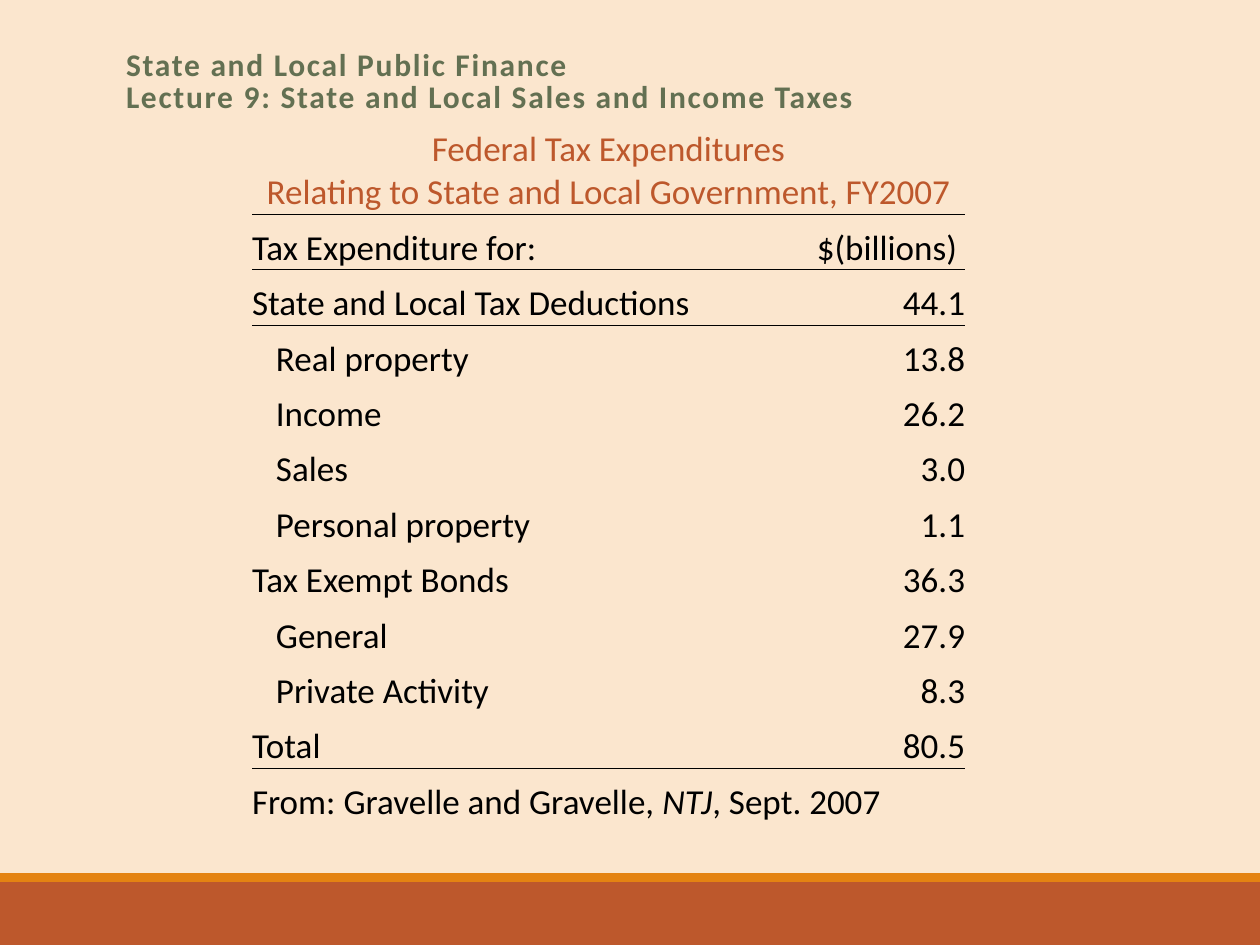
from lxml import etree
from pptx import Presentation, util as u
from pptx.dml.color import RGBColor
from pptx.enum import shapes, text
from pptx.oxml import ns

COLORS = {"background": "FBE6CE", "rust": "BD582C", "orange": "E48312",
          "green": "637052", "ink": "000000"}
LEFT, CENTER, RIGHT = text.PP_ALIGN.LEFT, text.PP_ALIGN.CENTER, text.PP_ALIGN.RIGHT
NO_STYLE = "{2D5ABB26-0587-4C30-8999-92F81FD0307C}"


def add_run(paragraph, words, size, color, bold=False, italic=False):
    run = paragraph.add_run()
    run.text = words
    font = run.font
    font.name, font.size = "Calibri", u.Pt(size)
    font.bold, font.italic = bold, italic
    font.color.rgb = RGBColor.from_string(COLORS[color])
    return run


def add_border(cell, side):
    line = etree.SubElement(cell._tc.get_or_add_tcPr(), ns.qn(f"a:{side}"), w=str(u.Pt(0.5)))
    fill = etree.SubElement(line, ns.qn("a:solidFill"))
    etree.SubElement(fill, ns.qn("a:srgbClr"), val=COLORS["ink"])


prs = Presentation()
prs.slide_width, prs.slide_height = u.Inches(10), u.Inches(7.5)
slide = prs.slides.add_slide(prs.slide_layouts[5])
slide.background.fill.solid()
slide.background.fill.fore_color.rgb = RGBColor.from_string(COLORS["background"])

for top, height, color in [(7, 0.5, "rust"), (6.93, 0.07, "orange")]:
    band = slide.shapes.add_shape(shapes.MSO_SHAPE.RECTANGLE, 0, u.Inches(top),
                                  prs.slide_width, u.Inches(height))
    band.shadow.inherit = False
    band.fill.solid()
    band.fill.fore_color.rgb = RGBColor.from_string(COLORS[color])
    band.line.fill.background()

title = slide.shapes.title
title.left, title.top = u.Inches(0.9), u.Inches(0.33)
title.width, title.height = u.Inches(8.25), u.Inches(0.65)
title.text_frame.vertical_anchor = text.MSO_ANCHOR.MIDDLE
title.text_frame.auto_size = text.MSO_AUTO_SIZE.NONE
heading = title.text_frame.paragraphs[0]
heading.alignment, heading.line_spacing = LEFT, 0.85
course = add_run(heading, "State and Local Public Finance", 18, "green", bold=True)
heading.add_line_break()
lecture = add_run(heading, "Lecture 9: State and Local Sales and Income Taxes", 18, "green", bold=True)
for run in (course, lecture):
    run.font._element.set("spc", "100")

captions = ["Federal Tax Expenditures", "Relating to State and Local Government, FY2007"]
expenditures = [
    ("Tax Expenditure for:", "$(billions)", 0),
    ("State and Local Tax Deductions", "44.1", 0),
    ("Real property", "13.8", 0.19),
    ("Income", "26.2", 0.19),
    ("Sales", "3.0", 0.19),
    ("Personal property", "1.1", 0.19),
    ("Tax Exempt Bonds", "36.3", 0),
    ("General", "27.9", 0.19),
    ("Private Activity", "8.3", 0.19),
    ("Total", "80.5", 0),
]
header_row = len(captions)
source_row = header_row + len(expenditures)
ruled_below = {header_row - 1, header_row, source_row - 1}

table = slide.shapes.add_table(source_row + 1, 2, u.Inches(2), u.Inches(0.92),
                               u.Inches(5.66), u.Inches(5.62)).table
table.first_row = table.horz_banding = False
table._tbl.tblPr.find(ns.qn("a:tableStyleId")).text = NO_STYLE
for column, width in zip(table.columns, [4.42, 1.24]):
    column.width = u.Inches(width)

for index, row in enumerate(table.rows):
    row.height = u.Inches(0.3 if index == 1 else 0.44)
    for cell in row.cells:
        cell.margin_left = cell.margin_right = cell.margin_top = cell.margin_bottom = 0
        cell.vertical_anchor = text.MSO_ANCHOR.BOTTOM
        if index - 1 in ruled_below:
            add_border(cell, "lnT")
        if index in ruled_below:
            add_border(cell, "lnB")
        cell.fill.background()

for index in (*range(header_row), source_row):
    table.cell(index, 0).merge(table.cell(index, 1))

for index, caption in enumerate(captions):
    paragraph = table.cell(index, 0).text_frame.paragraphs[0]
    paragraph.alignment = CENTER
    add_run(paragraph, caption, 20, "rust")

for index, (label, amount, indent) in enumerate(expenditures, header_row):
    label_line, amount_line = [cell.text_frame.paragraphs[0] for cell in table.rows[index].cells]
    label_line._p.get_or_add_pPr().set("marL", str(u.Inches(indent)))
    add_run(label_line, label, 20, "ink")
    amount_line.alignment = CENTER if index == header_row else RIGHT
    add_run(amount_line, amount, 20, "ink")

source = table.cell(source_row, 0).text_frame.paragraphs[0]
for words, italic in [("From: Gravelle and Gravelle, ", False), ("NTJ", True), (", Sept. 2007", False)]:
    add_run(source, words, 20, "ink", italic=italic)

prs.save("out.pptx")
